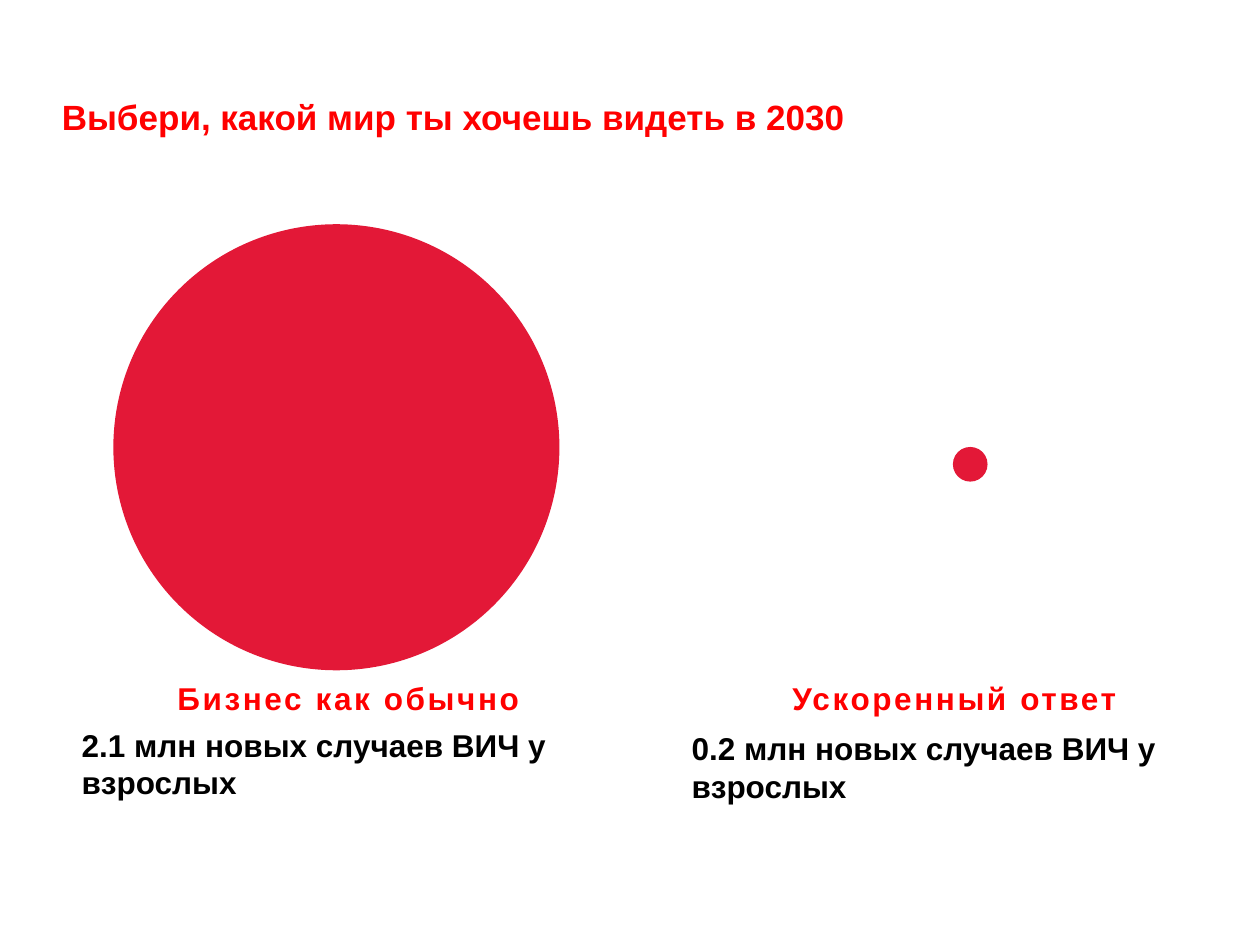
from dataclasses import dataclass

from pptx import Presentation
from pptx.dml.color import RGBColor
from pptx.enum.shapes import MSO_SHAPE
from pptx.enum.text import MSO_ANCHOR, MSO_AUTO_SIZE, PP_ALIGN
from pptx.util import Inches, Pt


@dataclass(frozen=True)
class Theme:
    font: str = "Arial"
    background: RGBColor = RGBColor(255, 255, 255)
    heading: RGBColor = RGBColor(255, 0, 0)
    body: RGBColor = RGBColor(0, 0, 0)
    circle: RGBColor = RGBColor(0xE3, 0x18, 0x37)
    title_size: int = 20
    text_size: int = 18
    label_spacing: int = 150


THEME = Theme()
TITLE = "Выбери, какой мир ты хочешь видеть в 2030"
TITLE_BOX = (3.9, 9.47, 96.1, 5.73)

SCENARIOS = [
    {
        "label": "Бизнес как обычно",
        "label_box": (6.2, 71.2, 42.9, 5.33),
        "result": "2.1 млн новых случаев ВИЧ у взрослых",
        "result_box": (5.5, 76.13, 46.4, 9.47),
        "center": (26.7, 47.33),
        "diameter": 35.4,
    },
    {
        "label": "Ускоренный ответ",
        "label_box": (54.3, 71.2, 42.9, 5.33),
        "result": "0.2 млн новых случаев ВИЧ у взрослых",
        "result_box": (53.9, 76.53, 47.3, 9.47),
        "center": (77, 49.13),
        "diameter": 2.75,
    },
]

presentation = Presentation()
presentation.slide_width = Inches(10)
presentation.slide_height = Inches(7.5)
slide = presentation.slides.add_slide(presentation.slide_layouts[5])


def across(percent):
    return round(presentation.slide_width * percent / 100)


def down(percent):
    return round(presentation.slide_height * percent / 100)


def place(box):
    left, top, width, height = box
    return across(left), down(top), across(width), down(height)


def write(shape, text, size, color, alignment=PP_ALIGN.LEFT, spacing=None):
    frame = shape.text_frame
    frame.word_wrap = True
    frame.auto_size = MSO_AUTO_SIZE.SHAPE_TO_FIT_TEXT
    frame.vertical_anchor = MSO_ANCHOR.TOP
    paragraph = frame.paragraphs[0]
    paragraph.alignment = alignment
    run = paragraph.add_run()
    run.text = text
    run.font.name = THEME.font
    run.font.size = Pt(size)
    run.font.bold = True
    run.font.color.rgb = color
    if spacing:
        run._r.get_or_add_rPr().set("spc", str(spacing))


def add_circle(center, diameter):
    size = across(diameter)
    left = across(center[0]) - size // 2
    top = down(center[1]) - size // 2
    circle = slide.shapes.add_shape(MSO_SHAPE.OVAL, left, top, size, size)
    circle.shadow.inherit = False
    circle.fill.solid()
    circle.fill.fore_color.rgb = THEME.circle
    circle.line.fill.background()


title = slide.shapes.title
title.left, title.top, title.width, title.height = place(TITLE_BOX)
title.fill.solid()
title.fill.fore_color.rgb = THEME.background
write(title, TITLE, THEME.title_size, THEME.heading)

for scenario in SCENARIOS:
    add_circle(scenario["center"], scenario["diameter"])
    label = slide.shapes.add_textbox(*place(scenario["label_box"]))
    write(label, scenario["label"], THEME.text_size, THEME.heading,
          PP_ALIGN.CENTER, THEME.label_spacing)
    result = slide.shapes.add_textbox(*place(scenario["result_box"]))
    write(result, scenario["result"], THEME.text_size, THEME.body)

presentation.save("out.pptx")
